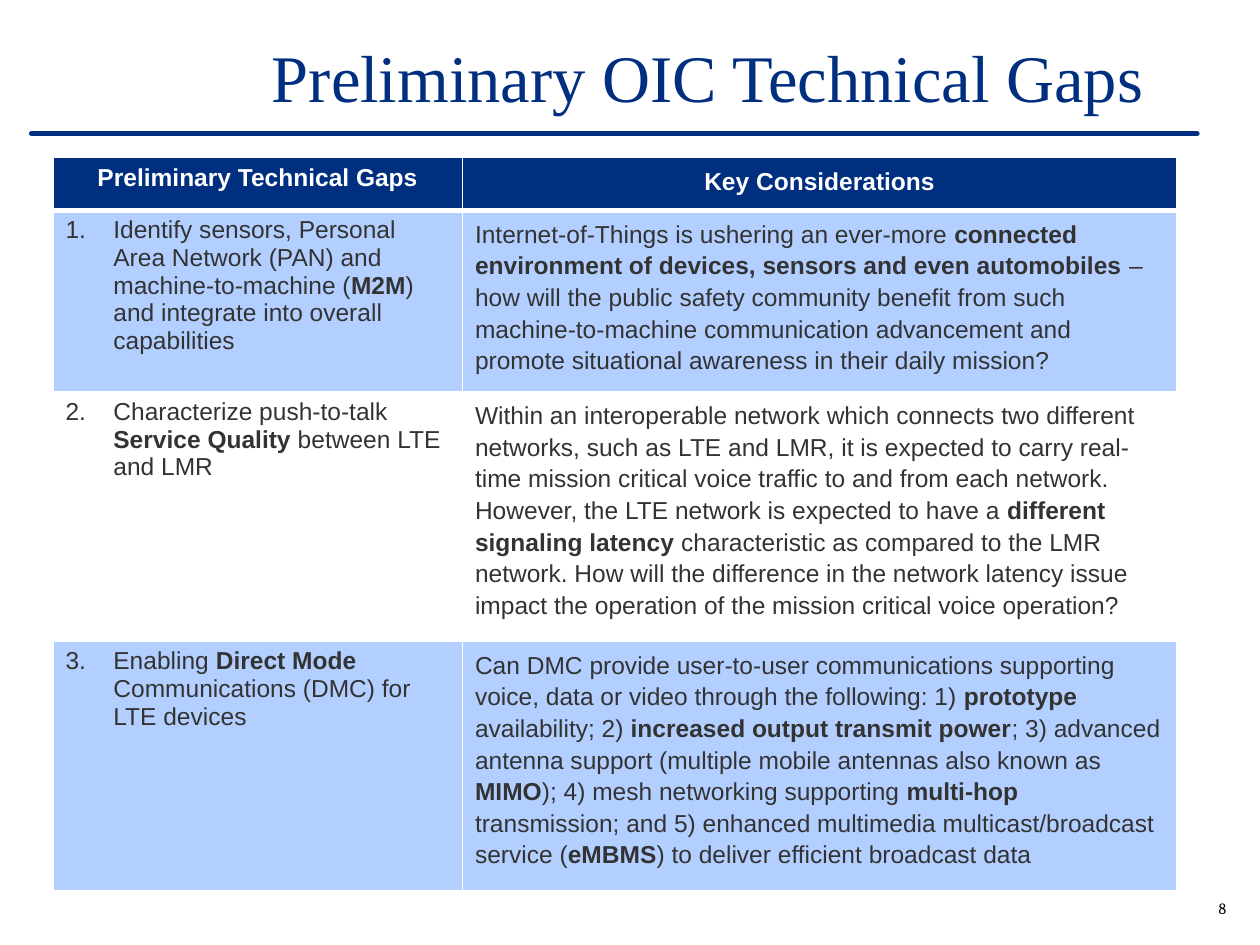
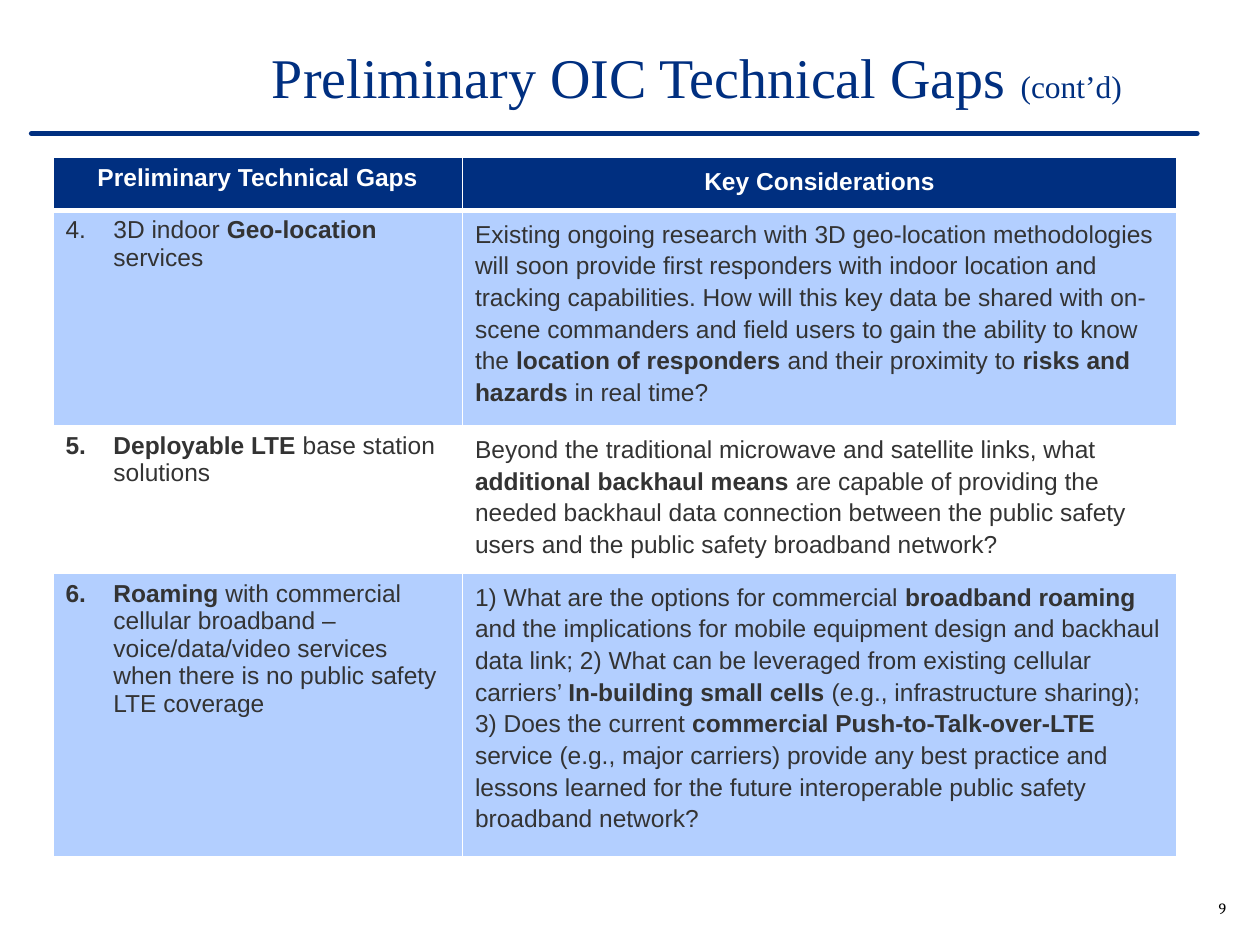
from dataclasses import dataclass
from typing import NamedTuple

from lxml.etree import SubElement
from pptx import Presentation
from pptx.dml.color import RGBColor
from pptx.enum.shapes import MSO_CONNECTOR
from pptx.enum.text import MSO_ANCHOR, PP_ALIGN
from pptx.oxml import parse_xml
from pptx.oxml.ns import nsdecls, qn
from pptx.util import Inches, Pt


@dataclass(frozen=True)
class Theme:
    navy: str = "002F80"
    pale_blue: str = "B3CFFF"
    white: str = "FFFFFF"
    black: str = "000000"
    body_text: str = "333333"
    title_font: str = "Times New Roman"
    table_font: str = "Arial"
    number_font: str = "Cambria"
    title_size: int = 38
    continued_title_size: int = 32
    suffix_size: int = 18
    table_size: int = 14
    number_size: int = 9
    rule_width: int = 3
    border: int = 1
    header_border: int = 3
    line_spacing: float = 1.15


class Span(NamedTuple):
    text: str
    size: float
    font: str
    color: str
    bold: bool = False


class Gap(NamedTuple):
    """One table row; ** marks bold words."""
    name: str
    considerations: str
    height: float


class GapPage(NamedTuple):
    number: int
    first_gap: int
    title: list[Span]
    title_width: float
    gaps: list[Gap]


THEME = Theme()
HEADINGS = ("Preliminary Technical Gaps", "Key Considerations")
COLUMN_WIDTHS = (3.25, 5.67)
HEADER_HEIGHT = 0.42
TABLE_LEFT, TABLE_TOP = 0.42, 1.25
NUMBER_INDENT = 0.38


def title_span(text: str, size: float) -> Span:
    return Span(text, size, THEME.title_font, THEME.navy)


PAGES = [
    GapPage(8, 1, [title_span("Preliminary OIC Technical Gaps", THEME.title_size)], 7.42, [
        Gap("Identify sensors, Personal Area Network (PAN) and machine-to-machine "
            "(**M2M**) and integrate into overall capabilities",
            "Internet-of-Things is ushering an ever-more **connected environment of devices, "
            "sensors and even automobiles** – how will the public safety community benefit "
            "from such machine-to-machine communication advancement and promote situational "
            "awareness in their daily mission?", 1.44),
        Gap("Characterize push-to-talk **Service Quality** between LTE and LMR",
            "Within an interoperable network which connects two different networks, such as "
            "LTE and LMR, it is expected to carry real-time mission critical voice traffic to "
            "and from each network. However, the LTE network is expected to have a "
            "**different signaling latency** characteristic as compared to the LMR network. "
            "How will the difference in the network latency issue impact the operation of "
            "the mission critical voice operation?", 1.98),
        Gap("Enabling **Direct Mode** Communications (DMC) for LTE devices",
            "Can DMC provide user-to-user communications supporting voice, data or video "
            "through the following: 1) **prototype** availability; 2) **increased output "
            "transmit power**; 3) advanced antenna support (multiple mobile antennas also "
            "known as **MIMO**); 4) mesh networking supporting **multi-hop** transmission; "
            "and 5) enhanced multimedia multicast/broadcast service (**eMBMS**) to deliver "
            "efficient broadcast data", 1.97),
    ]),
    GapPage(9, 4, [title_span("Preliminary OIC Technical Gaps ", THEME.continued_title_size),
                   title_span("(cont’d)", THEME.suffix_size)], 7.53, [
        Gap("3D indoor **Geo-location** services",
            "Existing ongoing research with 3D geo-location methodologies will soon provide "
            "first responders with indoor location and tracking capabilities. How will this "
            "key data be shared with on-scene commanders and field users to gain the ability "
            "to know the **location of responders** and their proximity to **risks and "
            "hazards** in real time?", 1.71),
        Gap("**Deployable LTE** base station solutions",
            "Beyond the traditional microwave and satellite links, what **additional backhaul "
            "means** are capable of providing the needed backhaul data connection between the "
            "public safety users and the public safety broadband network?", 1.17),
        Gap("**Roaming** with commercial cellular broadband – voice/data/video services "
            "when there is no public safety LTE coverage",
            "1) What are the options for commercial **broadband roaming** and the implications "
            "for mobile equipment design and backhaul data link; 2) What can be leveraged from "
            "existing cellular carriers’ **In-building small cells** (e.g., infrastructure "
            "sharing); 3) Does the current **commercial Push-to-Talk-over-LTE** service (e.g., "
            "major carriers) provide any best practice and lessons learned for the future "
            "interoperable public safety broadband network?", 2.24),
    ]),
]


# Text
def add_spans(para, spans: list[Span]) -> None:
    for span in spans:
        run = para.add_run()
        run.text = span.text
        formats = {"size": Pt(span.size), "name": span.font, "bold": span.bold}
        for name, value in formats.items():
            setattr(run.font, name, value)
        run.font.color.rgb = RGBColor.from_string(span.color)


def table_spans(text: str, color: str) -> list[Span]:
    """Split at ** so that every second piece is bold."""
    return [Span(piece, THEME.table_size, THEME.table_font, color, index % 2 == 1)
            for index, piece in enumerate(text.split("**")) if piece]


def add_text(page, place: tuple[float, ...], spans: list[Span], anchor, align) -> None:
    box = page.shapes.add_textbox(*map(Inches, place))
    formats = {"word_wrap": True, "vertical_anchor": anchor}
    for name, value in formats.items():
        setattr(box.text_frame, name, value)
    para = box.text_frame.paragraphs[0]
    para.alignment = align
    add_spans(para, spans)


def number_paragraph(para, number: int) -> None:
    properties = para._p.get_or_add_pPr()
    properties.set("marL", str(Inches(NUMBER_INDENT)))
    properties.set("indent", str(-Inches(NUMBER_INDENT)))
    SubElement(properties, qn("a:buFont"), typeface="+mj-lt")
    SubElement(properties, qn("a:buAutoNum"), type="arabicPeriod", startAt=str(number))


# Rule under the title
def add_title_rule(page) -> None:
    rule = page.shapes.add_connector(
        MSO_CONNECTOR.STRAIGHT, Inches(0.25), Inches(1.06), Inches(9.5), Inches(1.06))
    rule.line.color.rgb = RGBColor.from_string(THEME.navy)
    rule.line.width = Pt(THEME.rule_width)
    rule.line._get_or_add_ln().set("cap", "rnd")
    SubElement(rule._element.spPr, qn("a:effectLst"))


# Table
def style_cell(cell, fill: str, top: float, bottom: float) -> None:
    cell.fill.solid()
    cell.fill.fore_color.rgb = RGBColor.from_string(fill)
    widths = {"lnL": THEME.border, "lnR": THEME.border, "lnT": top, "lnB": bottom}
    properties = cell._tc.get_or_add_tcPr()
    for index, (side, width) in enumerate(widths.items()):
        properties.insert(index, parse_xml(
            f'<a:{side} {nsdecls("a")} w="{Pt(width)}"><a:solidFill>'
            f'<a:srgbClr val="{THEME.white}"/></a:solidFill></a:{side}>'))


def add_gap_table(page, gaps: list[Gap], first_gap: int) -> None:
    heights = [HEADER_HEIGHT, *(gap.height for gap in gaps)]
    table = page.shapes.add_table(
        len(heights), len(COLUMN_WIDTHS), Inches(TABLE_LEFT), Inches(TABLE_TOP),
        Inches(sum(COLUMN_WIDTHS)), Inches(sum(heights))).table
    for column, width in zip(table.columns, COLUMN_WIDTHS):
        column.width = Inches(width)
    for row, height in zip(table.rows, heights):
        row.height = Inches(height)

    rows = [[f"**{heading}**" for heading in HEADINGS],
            *([gap.name, gap.considerations] for gap in gaps)]
    for row_index, texts in enumerate(rows):
        is_header = row_index == 0
        fill = THEME.navy if is_header else (THEME.white, THEME.pale_blue)[row_index % 2]
        top = THEME.header_border if row_index == 1 else THEME.border
        bottom = THEME.header_border if is_header else THEME.border
        for column_index, text in enumerate(texts):
            cell = table.cell(row_index, column_index)
            style_cell(cell, fill, top, bottom)
            para = cell.text_frame.paragraphs[0]
            para.alignment = PP_ALIGN.CENTER if is_header else PP_ALIGN.LEFT
            if column_index == 1:
                para.line_spacing = THEME.line_spacing
            elif not is_header:
                number_paragraph(para, first_gap + row_index - 1)
            add_spans(para, table_spans(text, THEME.white if is_header else THEME.body_text))


# Pages
def add_gap_page(deck, content: GapPage) -> None:
    page = deck.slides.add_slide(deck.slide_layouts[6])
    number = Span(str(content.number), THEME.number_size, THEME.number_font, THEME.black)
    add_text(page, (9.25, 7.08, 0.58, 0.25), [number], MSO_ANCHOR.BOTTOM, PP_ALIGN.RIGHT)
    add_title_rule(page)
    add_text(page, (2.06, 0.3, content.title_width, 0.61), content.title,
             MSO_ANCHOR.MIDDLE, PP_ALIGN.LEFT)
    add_gap_table(page, content.gaps, content.first_gap)


def main() -> None:
    deck = Presentation()
    deck.slide_width, deck.slide_height = Inches(10), Inches(7.5)
    for content in PAGES:
        add_gap_page(deck, content)
    deck.save("out.pptx")


if __name__ == "__main__":
    main()
